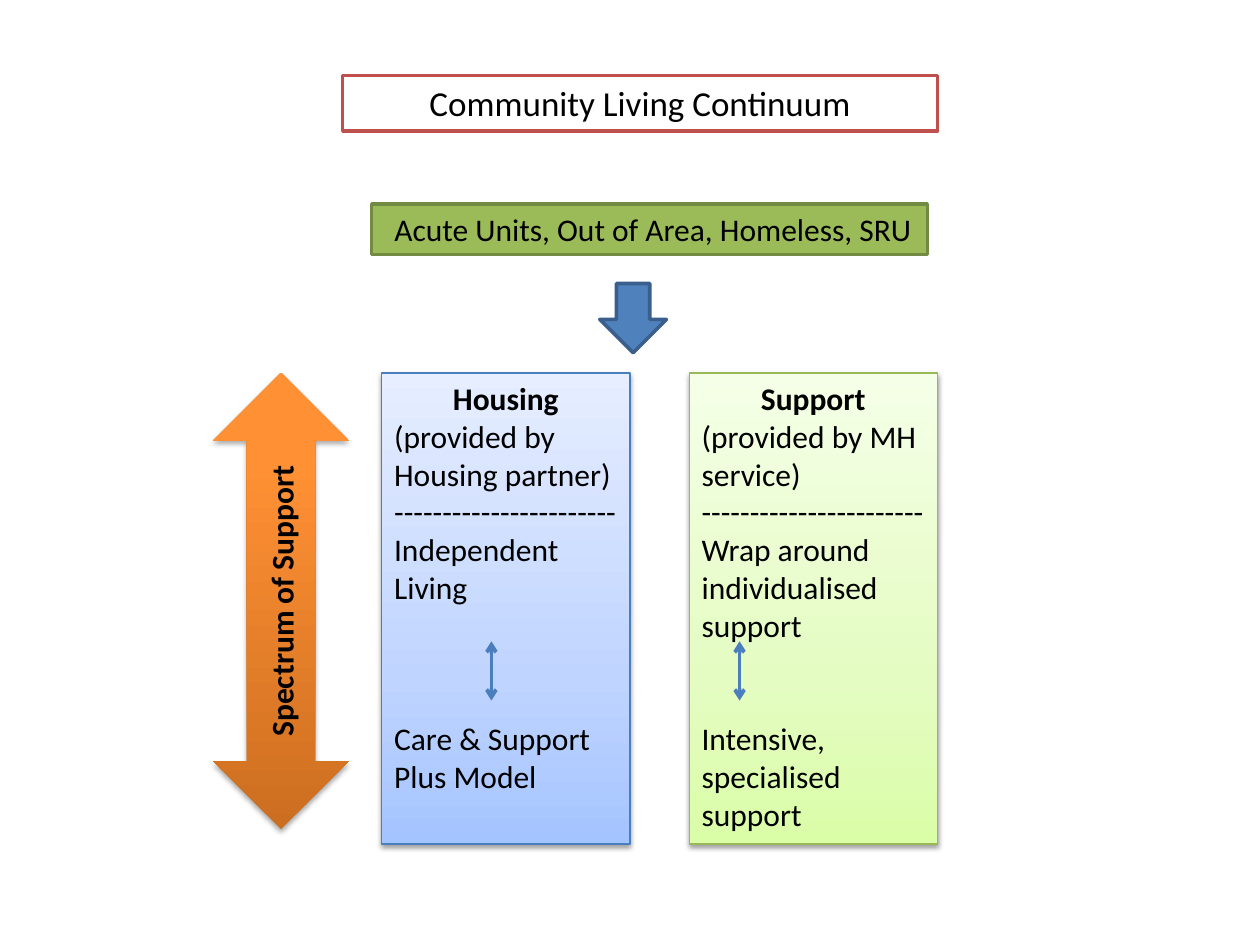
from copy import deepcopy
from pptx import Presentation
from pptx import util as u
from pptx.dml.color import RGBColor as RGB
from pptx.enum import shapes, text
from pptx.oxml import parse_xml
from pptx.oxml.ns import nsdecls, qn

BLACK, WHITE = RGB(0, 0, 0), RGB(255, 255, 255)
RED, BLUE = RGB(0xC0, 0x50, 0x4D), RGB(0x4F, 0x81, 0xBD)
NAVY, EDGE = RGB(0x3A, 0x5F, 0x8C), RGB(0x4B, 0x7E, 0xBC)
GREEN, OLIVE, LIME = (RGB(0x9B, 0xBB, 0x59), RGB(0x73, 0x8A, 0x42),
                      RGB(0x98, 0xB9, 0x55))
SKY = [(0, RGB(0xA4, 0xC4, 0xFF)), (0.35, RGB(0xBF, 0xD4, 0xFF)),
       (1, RGB(0xE6, 0xEE, 0xFF))]
LEAF = [(0, RGB(0xDA, 0xFD, 0xA7)), (0.35, RGB(0xE4, 0xFC, 0xC2)),
        (1, RGB(0xF5, 0xFF, 0xE7))]
FLAME = [(0, RGB(0xCC, 0x6E, 0x20)), (0.8, RGB(0xFF, 0x90, 0x34)),
         (1, RGB(0xFF, 0x91, 0x36))]

# Content
TITLE = "Community Living Continuum"
SOURCES = " Acute Units, Out of Area, Homeless, SRU"
SCALE = "Spectrum of Support"
RULE = "-" * 23
# heading, body, last entry, lines left free above it, fill, edge, arrow x
COLS = [
    ("Housing", ["(provided by Housing partner)", RULE, "Independent Living"],
     "Care & Support Plus Model", 3, SKY, EDGE, 3.9),
    ("Support", ["(provided by MH service)", RULE,
                 "Wrap around individualised support"],
     "Intensive, specialised support", 2, LEAF, LIME, 5.87),
]

# Grid in inches
LEFT, TOP, WIDE, HIGH, STEP = 3.03, 2.96, 1.97, 3.74, 2.44
SPAN = (5.09, 5.56)
LINE = 21.6

KIND = shapes.MSO_SHAPE
deck = Presentation()
deck.slide_width, deck.slide_height = u.Inches(10), u.Inches(7.5)
slide = deck.slides.add_slide(deck.slide_layouts[6])


def blend(shape, stops):
    fill = shape.fill
    fill.gradient()
    fill.gradient_angle = 90
    group = shape._element.spPr.find(".//" + qn("a:gsLst"))
    while len(group) < len(stops):
        group.append(deepcopy(group[0]))
    for stop, (pos, tone) in zip(fill.gradient_stops, stops):
        stop.position = pos
        stop.color.rgb = tone


def shade(shape, dist, alpha):
    shape._element.spPr.find(qn("a:effectLst")).append(parse_xml(
        f'<a:outerShdw {nsdecls("a")} blurRad="{u.Pt(3.1)}" '
        f'dist="{u.Pt(dist)}" dir="5400000" rotWithShape="0">'
        f'<a:srgbClr val="000000"><a:alpha val="{alpha * 1000}"/>'
        '</a:srgbClr></a:outerShdw>'))


def draw(kind, box, fill, edge=None, width=2):
    shape = slide.shapes.add_shape(kind, *map(u.Inches, box))
    if isinstance(fill, list):
        blend(shape, fill)
    else:
        shape.fill.solid()
        shape.fill.fore_color.rgb = fill
    if edge is None:
        shape.line.fill.background()
    else:
        shape.line.color.rgb = edge
        shape.line.width = u.Pt(width)
    shape.shadow.inherit = False
    return shape


def write(shape, rows, anchor=text.MSO_ANCHOR.TOP):
    """Each row: words, centred, bold, size, space before."""
    frame = shape.text_frame
    frame.word_wrap = True
    frame.vertical_anchor = anchor
    for i, (words, mid, bold, size, gap) in enumerate(rows):
        para = frame.add_paragraph() if i else frame.paragraphs[0]
        para.alignment = text.PP_ALIGN.CENTER if mid else text.PP_ALIGN.LEFT
        para.space_before = u.Pt(gap)
        run = para.add_run()
        run.text = words
        font = run.font
        font.name, font.size, font.bold = "Calibri", u.Pt(size), bold
        font.color.rgb = BLACK


def link(x, top, end):
    line = slide.shapes.add_connector(
        shapes.MSO_CONNECTOR.STRAIGHT, *map(u.Inches, (x, top, x, end)))
    line.line.color.rgb = EDGE
    line.line.width = u.Pt(2)
    for tag in ("headEnd", "tailEnd"):
        line.line._get_or_add_ln().append(
            parse_xml(f'<a:{tag} {nsdecls("a")} type="arrow"/>'))
    line._element.spPr.append(parse_xml(f'<a:effectLst {nsdecls("a")}/>'))


# Title, sources and the arrow down
write(draw(KIND.RECTANGLE, (2.72, 0.6, 4.72, 0.44), WHITE, RED),
      [(TITLE, True, False, 20, 0)])
write(draw(KIND.RECTANGLE, (2.95, 1.62, 4.41, 0.4), GREEN, OLIVE),
      [(SOURCES, True, False, 18, 0)])
draw(KIND.DOWN_ARROW, (4.76, 2.25, 0.53, 0.55), BLUE, NAVY)

# Two columns, each with its own range arrow
for i, (head, body, last, free, fill, edge, x) in enumerate(COLS):
    panel = draw(KIND.RECTANGLE, (LEFT + i * STEP, TOP, WIDE, HIGH),
                 fill, edge, 0.75)
    shade(panel, 1.6, 38)
    write(panel, [(head, True, True, 18, 0)]
          + [(words, False, False, 18, 0) for words in body]
          + [(last, False, False, 18, free * LINE)])
    link(x, *SPAN)

# Scale at the left
scale = draw(KIND.UP_DOWN_ARROW, (1.69, TOP, 1.08, 3.62), FLAME)
shade(scale, 1.8, 35)
write(scale, [(SCALE, True, True, 18, 0)], text.MSO_ANCHOR.MIDDLE)
scale.text_frame._txBody.bodyPr.set("vert", "vert270")

deck.save("out.pptx")
